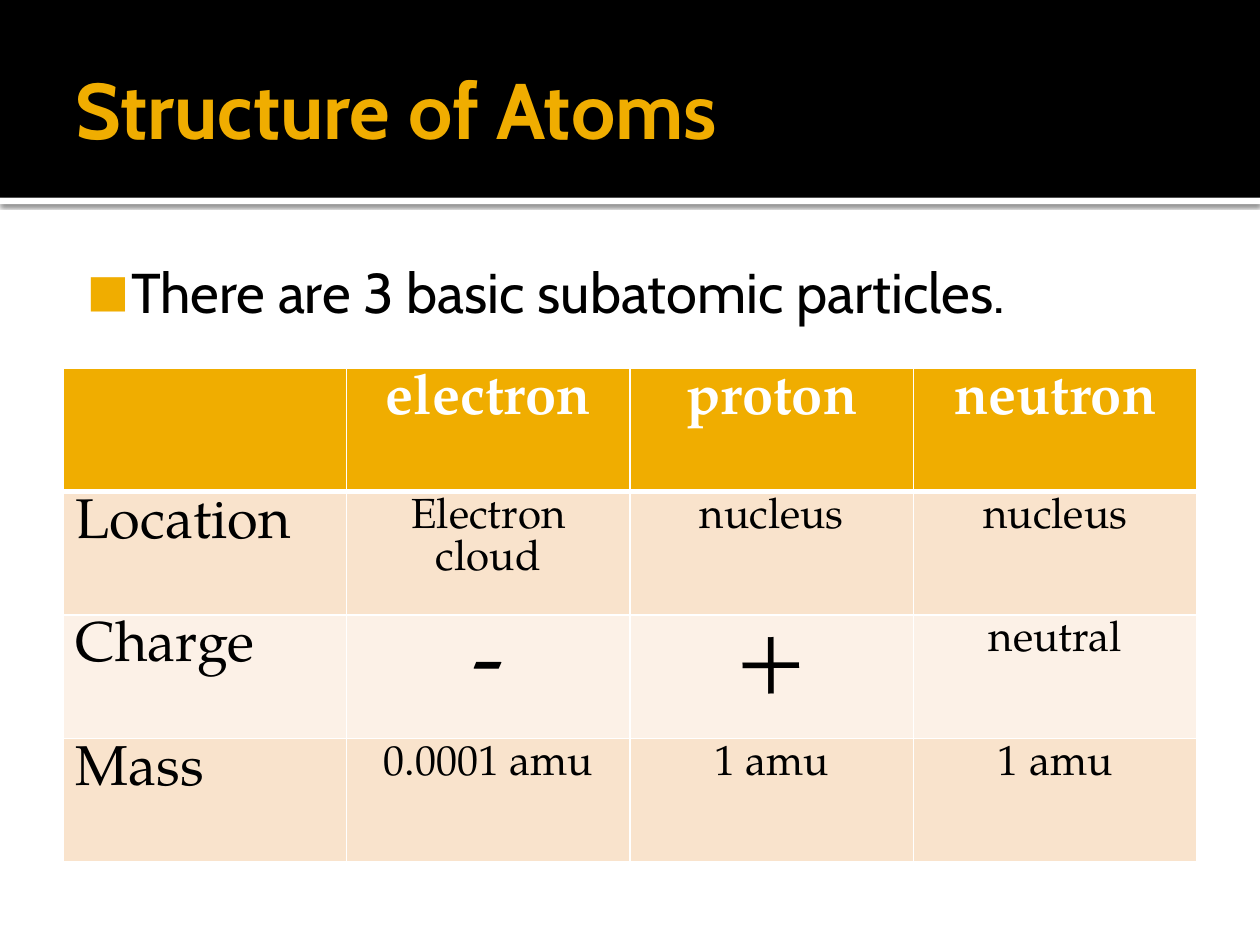
from lxml import etree
from pptx import Presentation
from pptx.dml.color import RGBColor
from pptx.enum.shapes import MSO_SHAPE
from pptx.enum.text import MSO_ANCHOR, MSO_AUTO_SIZE, PP_ALIGN
from pptx.oxml import parse_xml
from pptx.oxml.ns import qn
from pptx.util import Inches, Pt

RECTANGLE = MSO_SHAPE.RECTANGLE
TOP, MIDDLE = MSO_ANCHOR.TOP, MSO_ANCHOR.MIDDLE
NO_FIT = MSO_AUTO_SIZE.NONE
LEFT, CENTER = PP_ALIGN.LEFT, PP_ALIGN.CENTER

COLORS = {
    "gold": "F0AD00",
    "black": "000000",
    "white": "FFFFFF",
    "peach": "F9E3CC",
    "cream": "FCF1E7",
}
HEADING_FONT = "Cabin"
TABLE_FONT = "TeX Gyre Pagella"
TITLE = "Structure of Atoms"
STATEMENT = "There are 3 basic subatomic particles."
PARTICLES = [
    ["", "electron", "proton", "neutron"],
    ["Location", "Electron cloud", "nucleus", "nucleus"],
    ["Charge", "-", "+", "neutral"],
    ["Mass", "0.0001 amu", "1 amu", "1 amu"],
]
LABEL_SIZE, VALUE_SIZE, SIGN_SIZE = 32, 24, 54
COLUMN_WIDTH, ROW_HEIGHT = 2.25, 0.98
DRAWING = "http://schemas.openxmlformats.org/drawingml/2006/main"


def color(name):
    return RGBColor.from_string(COLORS[name])


def add_span(para, text, font, size, shade, bold=False):
    span = para.add_run()
    span.text = text
    span.font.name = font
    span.font.size = Pt(size)
    span.font.bold = bold
    span.font.color.rgb = color(shade)


def add_bar(page, position, top, height, shade):
    bar = page.shapes.add_shape(RECTANGLE, 0, Inches(top), Inches(10), Inches(height))
    bar.shadow.inherit = False
    bar.fill.solid()
    bar.fill.fore_color.rgb = color(shade)
    bar.line.fill.background()
    page.shapes._spTree.insert(position, bar._element)
    return bar


def add_shadow(bar):
    effects = bar._element.spPr.find(qn("a:effectLst"))
    effects.append(parse_xml(
        f'<a:outerShdw xmlns:a="{DRAWING}" blurRad="{Pt(2.5)}" dist="{Pt(0.8)}" dir="5400000">'
        f'<a:srgbClr val="{COLORS["black"]}"><a:alpha val="60000"/></a:srgbClr></a:outerShdw>'))


def place_text(box, bounds, margins, anchor):
    box.left, box.top, box.width, box.height = map(Inches, bounds)
    frame = box.text_frame
    frame.word_wrap = True
    frame.auto_size = NO_FIT
    frame.vertical_anchor = anchor
    (frame.margin_left, frame.margin_top,
     frame.margin_right, frame.margin_bottom) = map(Inches, margins)
    para = frame.paragraphs[0]
    para.alignment = LEFT
    para.space_before = Pt(0)
    return para


def set_bullet(para):
    properties = para._p.get_or_add_pPr()
    properties.set("marL", str(Inches(0.48)))
    properties.set("indent", str(Inches(-0.35)))
    shade = etree.SubElement(properties, qn("a:buClr"))
    etree.SubElement(shade, qn("a:srgbClr"), val=COLORS["gold"])
    etree.SubElement(properties, qn("a:buSzPct"), val="80000")
    etree.SubElement(properties, qn("a:buFont"), typeface=HEADING_FONT)
    etree.SubElement(properties, qn("a:buChar"), char="■")


def set_borders(cell, bottom_width, top_width):
    properties = cell._tc.get_or_add_tcPr()
    widths = {"lnL": 1, "lnR": 1, "lnT": top_width, "lnB": bottom_width}
    for position, (side, width) in enumerate(widths.items()):
        properties.insert(position, parse_xml(
            f'<a:{side} xmlns:a="{DRAWING}" w="{Pt(width)}"><a:solidFill>'
            f'<a:srgbClr val="{COLORS["white"]}"/></a:solidFill></a:{side}>'))


def fill_cell(cell, text, row, column):
    header = row == 0
    cell.fill.solid()
    cell.fill.fore_color.rgb = color("gold" if header else "peach" if row % 2 else "cream")
    set_borders(cell, 3 if header else 1, 3 if row == 1 else 1)
    if not text:
        return
    para = cell.text_frame.paragraphs[0]
    para.alignment = CENTER if column else LEFT
    if header or column == 0:
        size = LABEL_SIZE
    else:
        size = SIGN_SIZE if text in "+-" else VALUE_SIZE
    add_span(para, text, TABLE_FONT, size, "white" if header else "black", header)


def add_particle_table(page):
    count_rows, count_columns = len(PARTICLES), len(PARTICLES[0])
    table = page.shapes.add_table(
        count_rows, count_columns, Inches(0.5), Inches(2.92),
        Inches(COLUMN_WIDTH * count_columns), Inches(ROW_HEIGHT * count_rows)).table
    for row, texts in enumerate(PARTICLES):
        table.rows[row].height = Inches(ROW_HEIGHT)
        for column, text in enumerate(texts):
            fill_cell(table.cell(row, column), text, row, column)


def main():
    deck = Presentation()
    deck.slide_width, deck.slide_height = Inches(10), Inches(7.5)
    page = deck.slides.add_slide(deck.slide_layouts[1])
    page.background.fill.solid()
    page.background.fill.fore_color.rgb = color("white")

    add_shadow(add_bar(page, 2, 1.57, 0.05, "white"))
    add_bar(page, 3, 0, 1.57, "black")

    para = place_text(page.shapes.title, (0.5, 0.17, 9, 1.37), (0.1, 0.05, 0.05, 0.05), MIDDLE)
    add_span(para, TITLE, HEADING_FONT, 45, "gold", True)

    para = place_text(page.placeholders[1], (0.5, 1.94, 9, 5.06), (0.06, 0.1, 0.1, 0.05), TOP)
    set_bullet(para)
    add_span(para, STATEMENT, HEADING_FONT, 32, "black")

    add_particle_table(page)
    deck.save("out.pptx")


if __name__ == "__main__":
    main()
